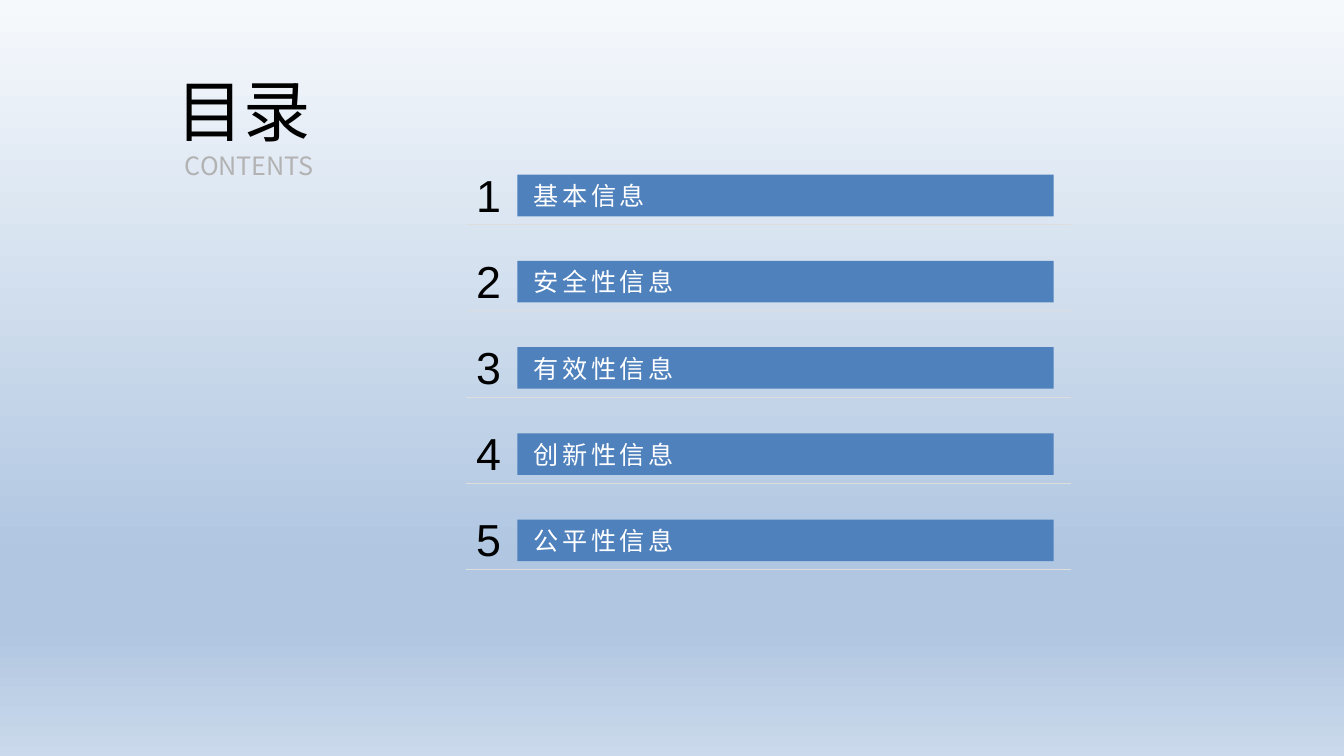
from dataclasses import dataclass

from lxml import etree
from pptx import Presentation
from pptx import util as u
from pptx.dml.color import RGBColor
from pptx.enum import shapes, text
from pptx.oxml.ns import qn


@dataclass(frozen=True)
class Theme:
    latin: str = "Arial"
    chinese: str = "Noto Sans CJK SC"
    black: str = "000000"
    white: str = "FFFFFF"
    grey: str = "B2B2B2"
    green: str = "109F83"
    bar: str = "4F81BD"
    rule: str = "DDDDDD"
    sky: tuple = ((0, "F6F9FC"), (74, "B0C6E1"), (83, "B0C6E1"), (100, "CAD9EB"))
    heading_size: float = 36
    gap_size: float = 27
    number_size: float = 24
    label_size: float = 13.5


THEME = Theme()
WIDTH = 10
HEIGHT = WIDTH * 9 / 16

# Grid of the agenda, in inches: (left, width) columns and evenly spaced rows
NUMBER_COLUMN = (3.44, 0.39)
BAR_COLUMN = (3.85, 3.99)
RULE_COLUMN = (3.47, 4.5)
FIRST_ROW, ROW_PITCH = 1.22, HEIGHT / 8.77
NUMBER_HEIGHT = 0.45
BAR_OFFSET, BAR_HEIGHT = 0.08, 0.31
RULE_OFFSET = 0.45

TOPICS = ("基本信息", "安全性信息", "有效性信息", "创新性信息", "公平性信息")


def inches(*lengths):
    return [u.Inches(length) for length in lengths]


def paint_background(slide):
    """Fill the slide with a gradient running from top to bottom."""
    fill = slide.background.fill
    fill.gradient()
    fill.gradient_angle = 270
    stops = slide.element.find(".//" + qn("a:gsLst"))
    stops.clear()
    for share, color in THEME.sky:
        stop = etree.SubElement(stops, qn("a:gs"), pos=str(share * 1000))
        etree.SubElement(stop, qn("a:srgbClr"), val=color)


def prepare_frame(shape, left_inset=0):
    frame = shape.text_frame
    frame.word_wrap = True
    frame.auto_size = text.MSO_AUTO_SIZE.NONE
    frame.vertical_anchor = text.MSO_ANCHOR.MIDDLE
    frame.margin_left = u.Inches(left_inset)
    frame.margin_top = frame.margin_right = frame.margin_bottom = 0
    return frame


def add_run(paragraph, words, size, color, font=THEME.latin, spacing=0):
    run = paragraph.add_run()
    run.text = words
    run.font.size = u.Pt(size)
    run.font.name = font
    run.font.color.rgb = RGBColor.from_string(color)
    properties = run.font._element
    properties.find(qn("a:latin")).addnext(
        properties.makeelement(qn("a:ea"), {"typeface": THEME.chinese}))
    if spacing:
        properties.set("spc", str(spacing * 100))


def add_heading(slide):
    heading = slide.shapes.title
    heading.left, heading.top, heading.width, heading.height = inches(
        1.05, 0.51, 1.61, 0.84)
    frame = prepare_frame(heading)
    chinese, english = frame.paragraphs[0], frame.add_paragraph()
    chinese.alignment = english.alignment = text.PP_ALIGN.CENTER
    add_run(chinese, "目录", THEME.heading_size, THEME.black, THEME.chinese)
    add_run(chinese, " ", THEME.gap_size, THEME.green, THEME.chinese)
    add_run(english, "CONTENTS", THEME.label_size, THEME.grey, THEME.chinese)


def add_number(slide, number, top):
    left, width = NUMBER_COLUMN
    box = slide.shapes.add_textbox(*inches(left, top, width, NUMBER_HEIGHT))
    paragraph = prepare_frame(box).paragraphs[0]
    paragraph.alignment = text.PP_ALIGN.CENTER
    add_run(paragraph, str(number), THEME.number_size, THEME.black)


def add_bar(slide, topic, top):
    left, width = BAR_COLUMN
    bar = slide.shapes.add_shape(
        shapes.MSO_SHAPE.RECTANGLE, *inches(left, top, width, BAR_HEIGHT))
    bar.shadow.inherit = False
    bar.fill.solid()
    bar.fill.fore_color.rgb = RGBColor.from_string(THEME.bar)
    bar.line.fill.background()
    paragraph = prepare_frame(bar, left_inset=0.12).paragraphs[0]
    paragraph.alignment = text.PP_ALIGN.LEFT
    add_run(paragraph, topic, THEME.label_size, THEME.white, spacing=2)


def add_rule(slide, top):
    left, width = RULE_COLUMN
    rule = slide.shapes.add_connector(
        shapes.MSO_CONNECTOR.STRAIGHT, *inches(left, top, left + width, top))
    rule.line.color.rgb = RGBColor.from_string(THEME.rule)
    rule.line.width = u.Pt(0.25)
    etree.SubElement(rule._element.spPr, qn("a:effectLst"))


def main():
    deck = Presentation()
    deck.slide_width, deck.slide_height = inches(WIDTH, HEIGHT)
    title_only = deck.slide_layouts.get_by_name("Title Only")
    slide = deck.slides.add_slide(title_only)

    paint_background(slide)
    add_heading(slide)

    # One agenda row per topic
    for index, topic in enumerate(TOPICS):
        top = FIRST_ROW + index * ROW_PITCH
        add_number(slide, index + 1, top)
        add_bar(slide, topic, top + BAR_OFFSET)
        add_rule(slide, top + RULE_OFFSET)

    deck.save("out.pptx")


if __name__ == "__main__":
    main()
